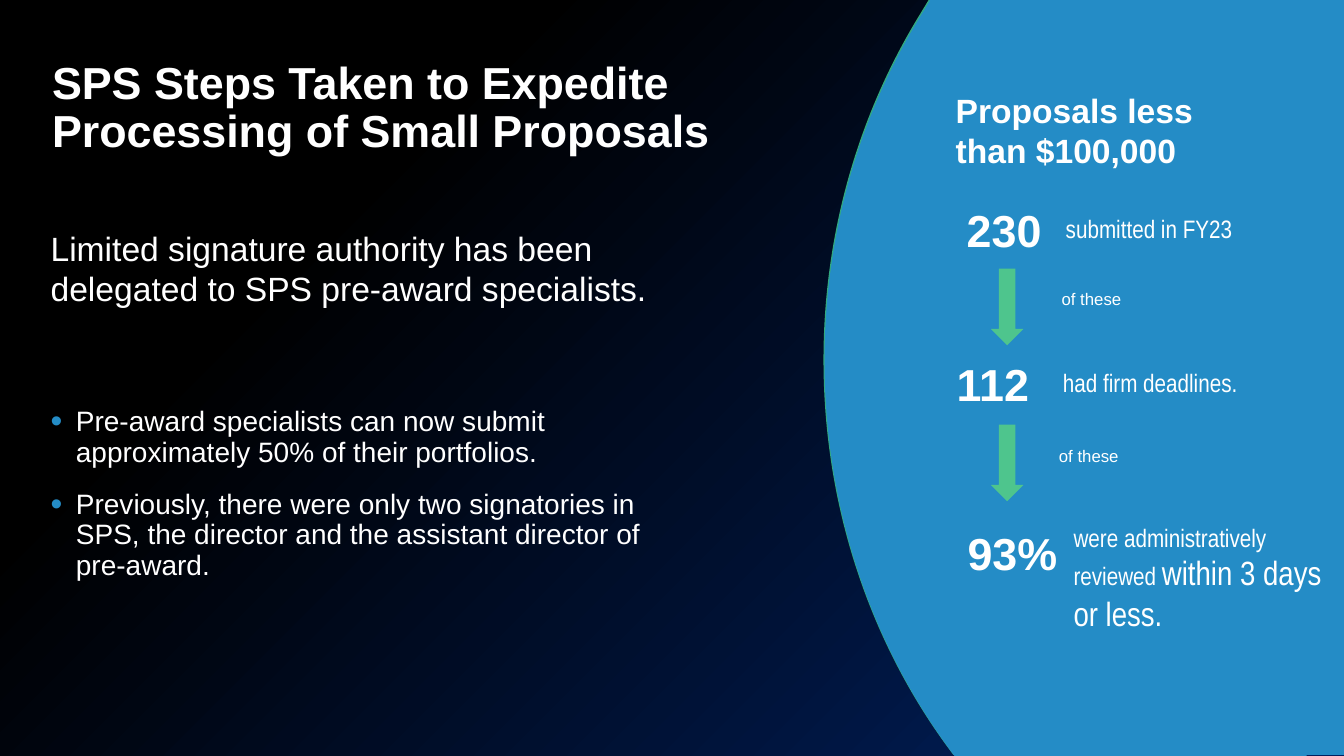
from lxml import etree
from pptx import Presentation
from pptx import util as u
from pptx.dml.color import RGBColor
from pptx.enum import shapes, text
from pptx.oxml.ns import qn

WIDE, HIGH = u.Inches(13.33), u.Inches(7.5)
BLACK = RGBColor(0x00, 0x00, 0x00)
NAVY = RGBColor(0x00, 0x20, 0x60)
WHITE = RGBColor(0xFF, 0xFF, 0xFF)
BLUE = RGBColor(0x24, 0x8C, 0xC6)
EDGE = RGBColor(0x32, 0xAA, 0x7F)
GREEN = RGBColor(0x4E, 0xC5, 0x8D)

SIDES = [(69.22, 0), (97.22, 0), (97.22, 100), (71.02, 100), (70.74, 99.33)]
ARCS = [(64.89, 85.33), (61.35, 67.33), (61.35, 47.73),
        (61.35, 30.93), (63.97, 15.33), (68.4, 2.4)]
STEPS = [
    ((71.19, 26.13), "230", (78.56, 27.6, 16.8, 5.33),
     [("submitted in FY23", 18)]),
    ((70.44, 46.53), "112", (78.35, 47.93, 16.73, 5.33),
     [("had firm deadlines.", 18)]),
    ((71.25, 68.93), "93%", (79.14, 68.4, 20.86, 16.13),
     [("were administratively reviewed ", 18), ("within 3 days or less.", 24)]),
]
LINKS = [(35.55, (78.25, 37.53)), (56.17, (78.05, 58.27))]


def span(left, top, wide, high):
    """Turn percentages of the slide into lengths."""
    return (int(WIDE * left / 100), int(HIGH * top / 100),
            int(WIDE * wide / 100), int(HIGH * high / 100))


def write(frame, paras, size=18, font="Arial", bold=False, line=None,
          gap=0, dot=None):
    """Fill a text frame; each paragraph is a string or (string, size) runs."""
    frame.word_wrap = True
    frame.auto_size = text.MSO_AUTO_SIZE.NONE
    frame.vertical_anchor = text.MSO_ANCHOR.TOP
    for i, runs in enumerate(paras):
        para = frame.add_paragraph() if i else frame.paragraphs[0]
        if dot:
            mark(para, dot)
        para.alignment = text.PP_ALIGN.LEFT
        para.line_spacing = line
        para.space_before = u.Pt(gap if i else 0)
        for words, points in [(runs, size)] if isinstance(runs, str) else runs:
            for j, part in enumerate(words.split("\n")):
                if j:
                    para.add_line_break()
                run = para.add_run()
                run.text = part
                run.font.name, run.font.size = font, u.Pt(points)
                run.font.bold = bold
                run.font.color.rgb = WHITE


def mark(para, tint):
    """Give a paragraph a coloured round bullet and a hanging indent."""
    props = para._p.get_or_add_pPr()
    props.set("marL", str(u.Inches(0.25)))
    props.set("indent", str(-u.Inches(0.25)))
    hue = etree.SubElement(props, qn("a:buClr"))
    etree.SubElement(hue, qn("a:srgbClr"), val=str(tint))
    etree.SubElement(props, qn("a:buSzPct"), val="120000")
    etree.SubElement(props, qn("a:buFont"), typeface="Arial")
    etree.SubElement(props, qn("a:buChar"), char="•")


def label(slide, area, paras, **form):
    """Add a text box."""
    write(slide.shapes.add_textbox(*span(*area)).text_frame, paras, **form)


def paint(shape, tint):
    """Give a shape a flat fill with no line or shadow."""
    shape.shadow.inherit = False
    shape.fill.solid()
    shape.fill.fore_color.rgb = tint
    shape.line.fill.background()


def block(slide, kind, area, tint):
    """Add a flat preset shape."""
    shape = slide.shapes.add_shape(kind, *span(*area))
    paint(shape, tint)
    return shape


def panel(slide, tint, dx=0, dy=0):
    """Add the round-sided panel, moved by a share of the slide."""
    spots = [span(x + dx, y + dy, 0, 0)[:2] for x, y in SIDES + ARCS]
    form = slide.shapes.build_freeform(*spots[0])
    form.add_line_segments(spots[1:], close=True)
    shape = form.convert_to_shape()
    paint(shape, tint)
    lines = list(shape._element.iter(qn("a:lnTo")))
    first = len(SIDES) - 1
    for i in range(first, first + len(ARCS), 3):
        bend = etree.Element(qn("a:cubicBezTo"))
        lines[i].addprevious(bend)
        for line in lines[i:i + 3]:
            bend.append(line[0])
            line.getparent().remove(line)


def shade(slide):
    """Lay a diagonal gradient over the whole slide."""
    fill = block(slide, shapes.MSO_SHAPE.RECTANGLE, (0, 0, 100, 100), BLACK).fill
    fill.gradient()
    fill.gradient_angle = 315
    for stop, place, tint in zip(fill.gradient_stops, (0.26, 0.97), (BLACK, NAVY)):
        stop.position = place
        stop.color.rgb = tint


def main():
    """Build and save the slide."""
    deck = Presentation()
    deck.slide_width, deck.slide_height = WIDE, HIGH
    slide = deck.slides.add_slide(deck.slide_layouts[5])
    shade(slide)
    panel(slide, EDGE, -0.08, -0.13)
    panel(slide, BLUE)

    title = slide.shapes.title
    slide.shapes._spTree.append(title._element)
    title.left, title.top, title.width, title.height = span(3.12, 7.33, 64.5, 19.33)
    write(title.text_frame,
          ["SPS Steps Taken to Expedite Processing of Small Proposals"],
          size=32, bold=True, line=0.9)
    label(slide, (3.03, 53.27, 49.06, 30.53),
          ["Pre-award specialists can now submit approximately 50% of their "
           "portfolios.",
           "Previously, there were only two signatories in SPS, the director "
           "and the assistant director of pre-award."],
          size=20, line=0.9, gap=16, dot=BLUE)
    label(slide, (3.03, 29.47, 53.04, 12.13),
          ["Limited signature authority has been delegated to SPS "
           "pre-award specialists."], size=24)

    label(slide, (70.37, 11.2, 25.36, 12.13),
          ["Proposals less \nthan $100,000"], size=24, bold=True)
    block(slide, shapes.MSO_SHAPE.RECTANGLE, (95.72, -0.13, 4.28, 100), BLUE)
    for spot, count, area, runs in STEPS:
        label(slide, (*spot, 9, 8.53), [count], size=32, bold=True)
        label(slide, area, [runs], font="Arial Narrow")
    for top, spot in LINKS:
        block(slide, shapes.MSO_SHAPE.DOWN_ARROW, (73.72, top, 2.43, 10.13), GREEN)
        label(slide, (*spot, 9, 4), ["of these"], size=12)
    deck.save("out.pptx")


if __name__ == "__main__":
    main()
